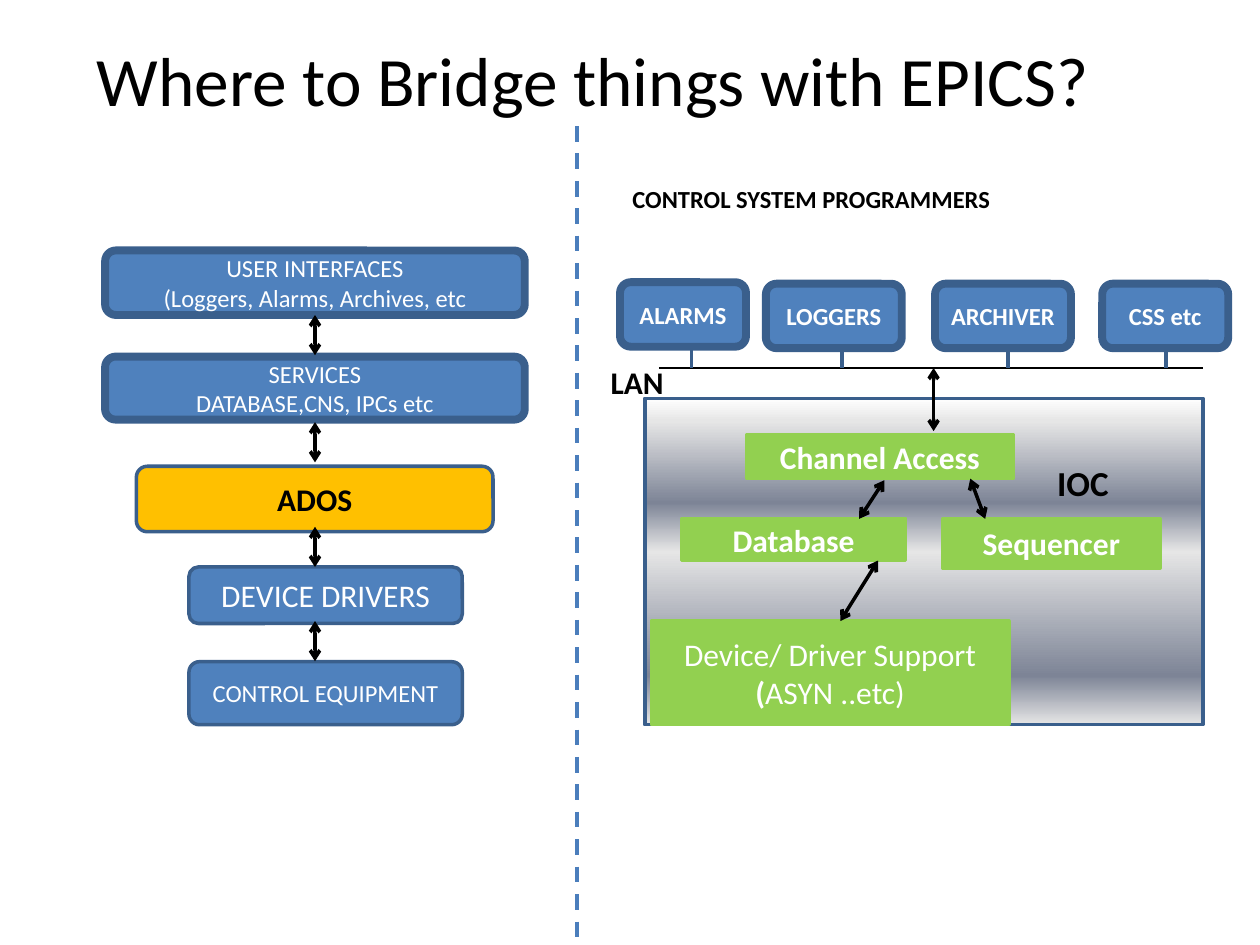
from dataclasses import dataclass

import lxml.etree
import pptx
import pptx.dml.color
import pptx.enum.dml
import pptx.enum.shapes
import pptx.enum.text
import pptx.oxml.ns
import pptx.util

Cm = pptx.util.Cm
Pt = pptx.util.Pt
RECTANGLE = pptx.enum.shapes.MSO_SHAPE.RECTANGLE
ROUNDED = pptx.enum.shapes.MSO_SHAPE.ROUNDED_RECTANGLE
MIDDLE = pptx.enum.text.MSO_ANCHOR.MIDDLE


@dataclass(frozen=True)
class Theme:
    font: str = "Calibri"
    black: str = "000000"
    white: str = "FFFFFF"
    blue: str = "4F81BD"
    outline: str = "3A5F8C"
    divider: str = "4B7EBC"
    amber: str = "FFC000"
    green: str = "92D050"
    metal: tuple = ((0, "FFFFFF"), (7, "E6E6E6"), (32, "7D8496"),
                    (47, "E6E6E6"), (85, "7D8496"), (100, "E6E6E6"))
    title: float = 39.6
    large: float = 20
    body: float = 18
    small: float = 14
    thin: float = 2
    thick: float = 4.5


THEME = Theme()


def rgb(value):
    return pptx.dml.color.RGBColor.from_string(value)


def add_element(parent, tag, **attributes):
    return lxml.etree.SubElement(parent, pptx.oxml.ns.qn(tag), **attributes)


def write(frame, paragraphs, size, color, align=None):
    frame.word_wrap = True
    for index, runs in enumerate(paragraphs):
        paragraph = frame.add_paragraph() if index else frame.paragraphs[0]
        paragraph.alignment = align
        for text, bold in runs:
            run = paragraph.add_run()
            run.text = text
            run.font.name = THEME.font
            run.font.size = Pt(size)
            run.font.bold = bold
            run.font.color.rgb = rgb(color)


def add_label(slide, left, top, width, height, text, size, bold=True):
    label = slide.shapes.add_textbox(Cm(left), Cm(top), Cm(width), Cm(height))
    write(label.text_frame, [[(text, bold)]], size, THEME.black)
    return label


def add_block(slide, kind, left, top, width, height, fill, outline, weight,
              paragraphs=(), size=THEME.body, color=THEME.white):
    shape = slide.shapes.add_shape(kind, Cm(left), Cm(top), Cm(width), Cm(height))
    shape.shadow.inherit = False
    shape.fill.solid()
    shape.fill.fore_color.rgb = rgb(fill)
    shape.line.color.rgb = rgb(outline)
    shape.line.width = Pt(weight)
    frame = shape.text_frame
    frame.vertical_anchor = MIDDLE
    frame.margin_left = frame.margin_right = Cm(0.1)
    write(frame, paragraphs, size, color, pptx.enum.text.PP_ALIGN.CENTER)
    return shape


def add_line(slide, start, end, color, weight, arrows=False):
    line = slide.shapes.add_connector(
        pptx.enum.shapes.MSO_CONNECTOR.STRAIGHT, *map(Cm, start + end))
    line.line.color.rgb = rgb(color)
    line.line.width = Pt(weight)
    if arrows:
        for tag in ("a:headEnd", "a:tailEnd"):
            add_element(line.line._get_or_add_ln(), tag, type="arrow")
    add_element(line._element.spPr, "a:effectLst")
    return line


def fill_metal(shape):
    shape.fill.gradient()
    shape.fill.gradient_angle = 270
    stops = shape._element.spPr.find(".//" + pptx.oxml.ns.qn("a:gsLst"))
    for stop in list(stops):
        stops.remove(stop)
    for position, color in THEME.metal:
        stop = add_element(stops, "a:gs", pos=str(position * 1000))
        add_element(stop, "a:srgbClr", val=color)


def add_heading(slide, left, top, width, height):
    title = add_label(slide, left, top, width, height,
                      "Where to Bridge things with EPICS?", THEME.title, False)
    title.text_frame.vertical_anchor = MIDDLE


def add_layer_stack(slide, left, top):
    blue, thin, thick = THEME.blue, THEME.thin, THEME.thick
    layers = [
        (0, 0, 8.46, 1.3, blue, thick, THEME.small, False,
         ["USER INTERFACES", "(Loggers, Alarms, Archives, etc"]),
        (0, 2.14, 8.46, 1.27, blue, thick, THEME.small, False,
         ["SERVICES", "DATABASE,CNS, IPCs etc"]),
        (0.63, 4.35, 7.19, 1.32, THEME.amber, thin, THEME.body, True, ["ADOS"]),
        (1.69, 6.38, 5.51, 1.14, blue, thin, THEME.body, False, ["DEVICE DRIVERS"]),
        (1.69, 8.29, 5.51, 1.27, blue, thin, THEME.small, False, ["CONTROL EQUIPMENT"]),
    ]
    for x, y, width, height, fill, weight, size, bold, lines in layers:
        color = THEME.black if fill == THEME.amber else THEME.white
        add_block(slide, ROUNDED, left + x, top + y, width, height, fill,
                  THEME.outline, weight, [[(text, bold)] for text in lines], size, color)
    center = left + 4.23
    for y in (1.3, 3.46, 5.57, 7.47):
        add_line(slide, (center, top + y), (center, top + y + 0.81),
                 THEME.black, THEME.thin, arrows=True)


def add_client_network(slide, left, top):
    add_label(slide, left + 0.44, top, 8.89, 0.86,
              "CONTROL SYSTEM PROGRAMMERS", THEME.small)
    add_label(slide, left, top + 3.61, 1.7, 1.02, "LAN", THEME.body)
    bus = top + 3.84
    add_line(slide, (left + 1.22, bus), (left + 12.2, bus), THEME.black, 0.75)
    clients = [
        ("ALARMS", 0.44, 2.11, 2.54, 1.88),
        ("LOGGERS", 3.38, 2.14, 2.74, 4.91),
        ("ARCHIVER", 6.79, 2.14, 2.74, 8.26),
        ("CSS etc", 10.16, 2.14, 2.54, 11.44),
    ]
    for text, x, y, width, stem in clients:
        add_line(slide, (left + stem, top + 3.46), (left + stem, bus),
                 THEME.outline, THEME.thin)
        add_block(slide, ROUNDED, left + x, top + y, width, 1.3, THEME.blue,
                  THEME.outline, THEME.thick, [[(text, True)]], THEME.small)


def add_controller(slide, left, top, width, height):
    panel = add_block(slide, RECTANGLE, left, top, width, height,
                      THEME.white, THEME.outline, THEME.thin)
    fill_metal(panel)
    parts = [
        (2.06, 0.73, 5.36, 0.89, [("Channel Access", True)]),
        (0.74, 2.43, 4.52, 0.84, [("Database", True)]),
        (6, 2.43, 4.39, 0.99, [("Sequencer", True)]),
        (0.13, 4.49, 7.21, 2.08,
         [("Device/ Driver Support ", False), ("(", True), ("ASYN ..etc)", False)]),
    ]
    for x, y, part_width, part_height, runs in parts:
        add_block(slide, RECTANGLE, left + x, top + y, part_width, part_height,
                  THEME.green, THEME.green, THEME.thin, [runs])
    links = [
        (5.82, -0.61, 5.82, 0.66),
        (4.83, 1.65, 4.32, 2.43),
        (4.7, 3.27, 3.94, 4.49),
        (6.56, 1.62, 6.86, 2.43),
    ]
    for x1, y1, x2, y2 in links:
        add_line(slide, (left + x1, top + y1), (left + x2, top + y2),
                 THEME.black, THEME.thin, arrows=True)
    add_label(slide, left + 8.06, top + 1.14, 2.18, 0.79, "IOC", THEME.large)


def main():
    presentation = pptx.Presentation()
    presentation.slide_width = Cm(25.4)
    presentation.slide_height = Cm(19.05)
    slide = presentation.slides.add_slide(presentation.slide_layouts[6])
    add_heading(slide, 1.7, 0, 22.43, 3.18)
    divider = add_line(slide, (11.63, 2.54), (11.63, 19.05), THEME.divider, 2.25)
    divider.line.dash_style = pptx.enum.dml.MSO_LINE.DASH
    add_controller(slide, 13, 8.03, 11.25, 6.58)
    add_client_network(slide, 12.06, 3.58)
    add_layer_stack(slide, 2.12, 5.05)
    presentation.save("out.pptx")


if __name__ == "__main__":
    main()
